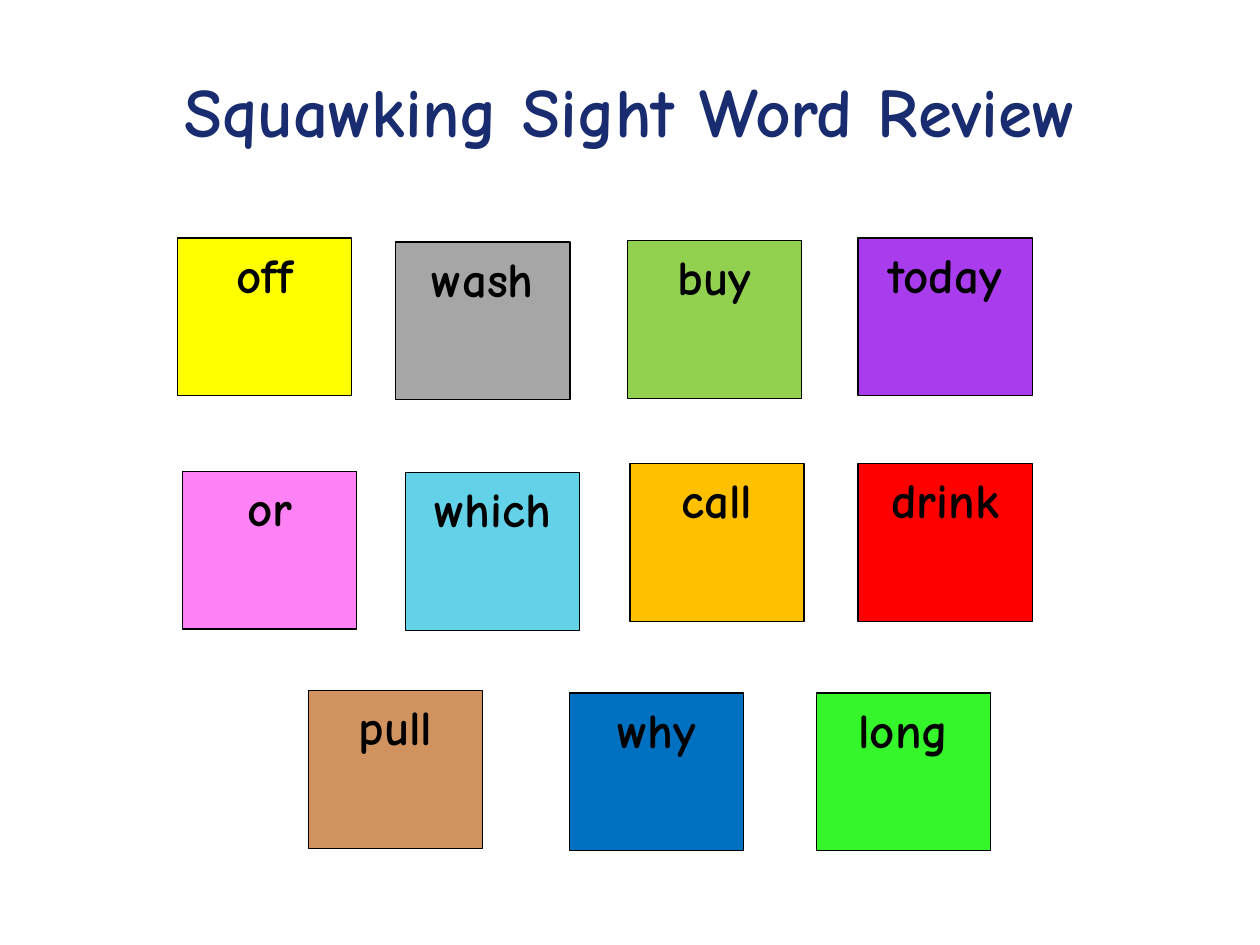
from pptx import Presentation
from pptx.dml.color import RGBColor
from pptx.enum.shapes import MSO_SHAPE
from pptx.enum.text import MSO_ANCHOR, PP_ALIGN
from pptx.util import Cm, Pt

COLORS = {
    "navy": "182C6F", "black": "000000", "yellow": "FFFF00", "gray": "A6A6A6",
    "olive": "92D050", "purple": "A93CEC", "pink": "FE82F5", "cyan": "63D1E7",
    "orange": "FFC000", "red": "FF0000", "tan": "D0935F", "blue": "0070C0",
    "green": "35F52B",
}

# word, fill, left and top in cm
CARDS = [
    ("off", "yellow", 3.58, 4.8),
    ("wash", "gray", 7.98, 4.88),
    ("buy", "olive", 12.65, 4.85),
    ("today", "purple", 17.3, 4.8),
    ("or", "pink", 3.68, 9.5),
    ("which", "cyan", 8.18, 9.53),
    ("call", "orange", 12.7, 9.35),
    ("drink", "red", 17.3, 9.35),
    ("pull", "tan", 6.22, 13.92),
    ("why", "blue", 11.48, 13.97),
    ("long", "green", 16.46, 13.97),
]
CARD_W, CARD_H = Cm(3.51), Cm(3.18)


def color(name):
    return RGBColor.from_string(COLORS[name])


def write(frame, text, size, ink, anchor):
    """Fill a frame with one centred bold line and return its paragraph."""
    frame.text = text
    frame.word_wrap = True
    frame.vertical_anchor = anchor
    line = frame.paragraphs[0]
    line.alignment = PP_ALIGN.CENTER
    font = line.runs[0].font
    font.name = "Comic Neue"
    font.size = Pt(size)
    font.bold = True
    font.color.rgb = color(ink)
    return line


deck = Presentation()
deck.slide_width, deck.slide_height = Cm(25.4), Cm(19.05)
slide = deck.slides.add_slide(deck.slide_layouts[5])

title = slide.shapes.title
title.left, title.top = Cm(1.27), Cm(0.76)
title.width, title.height = Cm(22.86), Cm(2.64)
line = write(title.text_frame, "Squawking Sight Word Review", 39.6, "navy",
             MSO_ANCHOR.MIDDLE)
line.line_spacing = 1.15
line.space_after = Pt(10)

for word, fill, left, top in CARDS:
    card = slide.shapes.add_shape(MSO_SHAPE.RECTANGLE, Cm(left), Cm(top),
                                  CARD_W, CARD_H)
    card.shadow.inherit = False
    card.fill.solid()
    card.fill.fore_color.rgb = color(fill)
    card.line.color.rgb = color("black")
    card.line.width = Pt(0.75)
    write(card.text_frame, word, 28, "black", MSO_ANCHOR.TOP)

deck.save("out.pptx")
